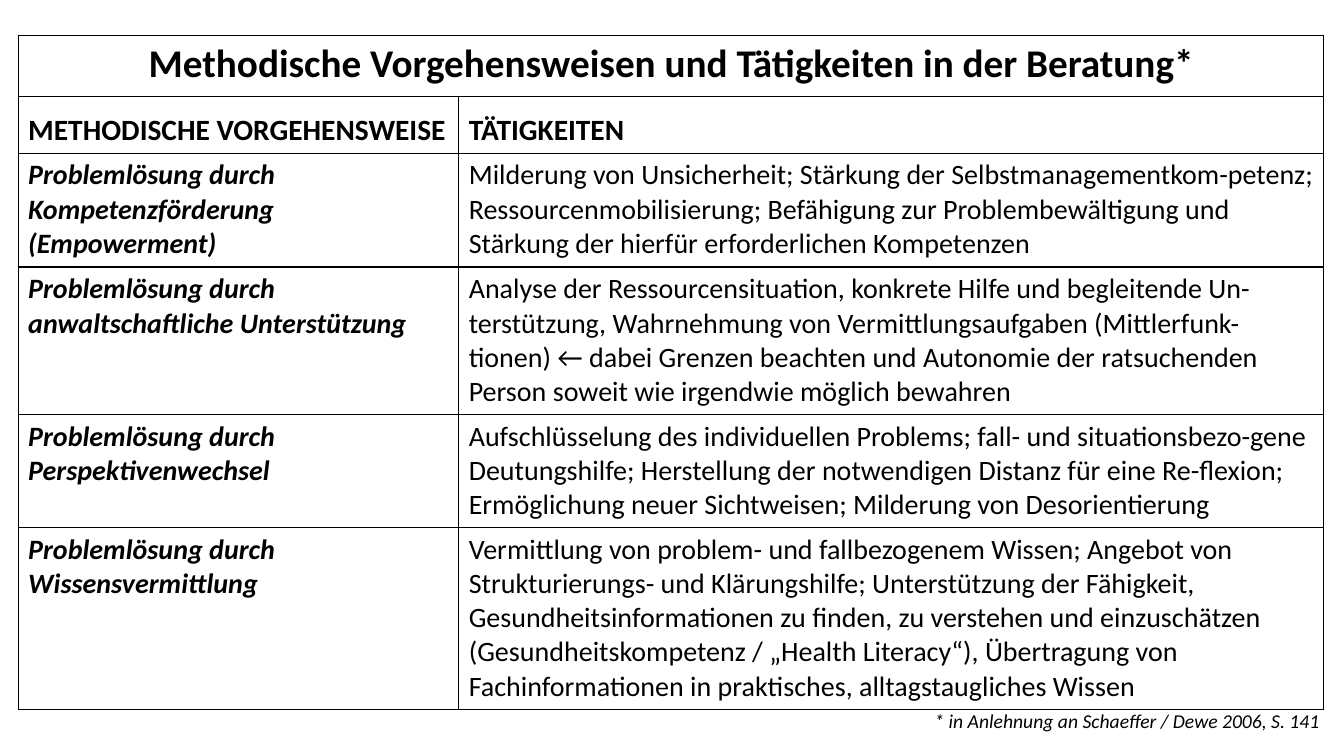
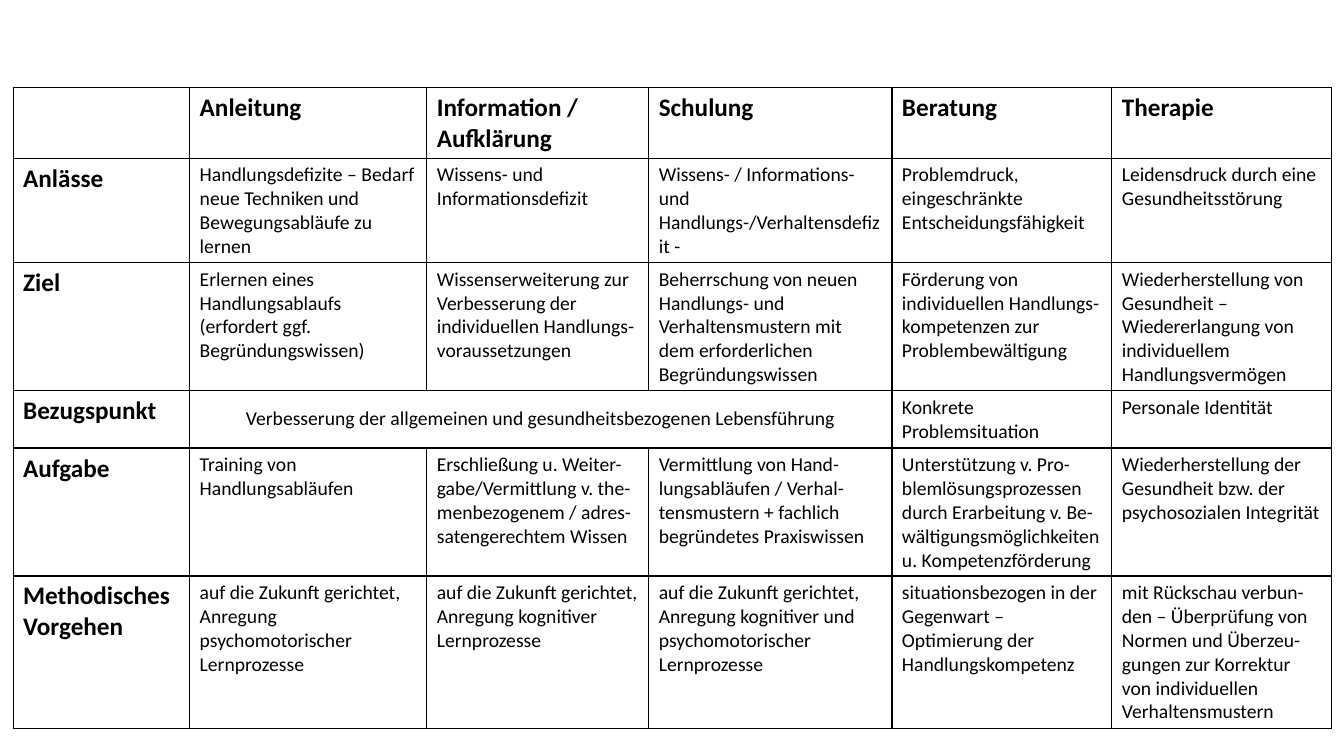
from lxml.etree import SubElement
from pptx import Presentation
from pptx.dml.color import RGBColor
from pptx.enum.text import MSO_ANCHOR as Anchor, PP_ALIGN as Align
from pptx.oxml.ns import qn
from pptx.util import Inches, Pt

# Shared look
FONT = "Calibri"
INK, PAPER = "000000", "FFFFFF"
BORDER_WIDTH = Pt(1)
SLIDE_W, SLIDE_H = 13.33, 7.5


def color(hex_value):
    return RGBColor.from_string(hex_value)


def write(frame, text, size, bold=False, italic=False, align=Align.LEFT):
    """Fill a text frame, one paragraph per line of text."""
    frame.text = text
    for paragraph in frame.paragraphs:
        paragraph.alignment = align
        font = paragraph.font
        for run_font in [font] + [run.font for run in paragraph.runs]:
            run_font.name, run_font.size = FONT, Pt(size)
            run_font.bold, run_font.italic = bold, italic
            run_font.color.rgb = color(INK)


def outline(cell):
    """Draw all four borders; they precede the fill in the cell properties."""
    properties = cell._tc.get_or_add_tcPr()
    for position, side in enumerate(("lnL", "lnR", "lnT", "lnB")):
        line = SubElement(properties, qn(f"a:{side}"), w=str(BORDER_WIDTH))
        fill = SubElement(line, qn("a:solidFill"))
        SubElement(fill, qn("a:srgbClr"), val=INK)
        properties.insert(position, line)


def add_grid(slide, box, columns, rows):
    """Place a bordered table in the box, split by column and row weights."""
    left, top, width, height = box
    grid = slide.shapes.add_table(
        len(rows), len(columns), *(Inches(length) for length in box)).table
    grid.first_row = grid.horz_banding = False
    for column, weight in zip(grid.columns, columns):
        column.width = Inches(width * weight / sum(columns))
    for row, weight in zip(grid.rows, rows):
        row.height = Inches(height * weight / sum(rows))
    for cell in grid.iter_cells():
        cell.fill.solid()
        cell.fill.fore_color.rgb = color(PAPER)
        outline(cell)
    return grid


def fill_cell(cell, text, anchor=Anchor.TOP, **text_format):
    cell.vertical_anchor = anchor
    write(cell.text_frame, text, **text_format)


# Slide 1: methods and activities
HEADING = "Methodische Vorgehensweisen und Tätigkeiten in der Beratung*"
COLUMN_HEADS = ("METHODISCHE VORGEHENSWEISE", "TÄTIGKEITEN")
METHODS = [
    ("Problemlösung durch Kompetenzförderung (Empowerment)",
     "Milderung von Unsicherheit; Stärkung der Selbstmanagementkom-petenz; "
     "Ressourcenmobilisierung; Befähigung zur Problembewältigung und "
     "Stärkung der hierfür erforderlichen Kompetenzen"),
    ("Problemlösung durch anwaltschaftliche Unterstützung",
     "Analyse der Ressourcensituation, konkrete Hilfe und begleitende "
     "Un-terstützung, Wahrnehmung von Vermittlungsaufgaben "
     "(Mittlerfunk-tionen) ← dabei Grenzen beachten und Autonomie der "
     "ratsuchenden Person soweit wie irgendwie möglich bewahren"),
    ("Problemlösung durch Perspektivenwechsel",
     "Aufschlüsselung des individuellen Problems; fall- und "
     "situationsbezo-gene Deutungshilfe; Herstellung der notwendigen Distanz "
     "für eine Re-flexion; Ermöglichung neuer Sichtweisen; Milderung von "
     "Desorientierung"),
    ("Problemlösung durch Wissensvermittlung",
     "Vermittlung von problem- und fallbezogenem Wissen; Angebot von "
     "Strukturierungs- und Klärungshilfe; Unterstützung der Fähigkeit, "
     "Gesundheitsinformationen zu finden, zu verstehen und einzuschätzen "
     "(Gesundheitskompetenz / „Health Literacy“), Übertragung von "
     "Fachinformationen in praktisches, alltagstaugliches Wissen"),
]
CITATION = "* in Anlehnung an Schaeffer / Dewe 2006, S. 141"


def add_citation(slide, box):
    note = slide.shapes.add_textbox(*(Inches(length) for length in box))
    note.text_frame.word_wrap = False
    write(note.text_frame, CITATION, size=14, italic=True)


def methods_slide(slide):
    grid = add_grid(slide, (0.18, 0.35, 12.95, 6.69), columns=(4.37, 8.58),
                    rows=(0.61, 0.56, 1.13, 1.46, 1.12, 1.81))
    # Heading across both columns
    grid.cell(0, 0).merge(grid.cell(0, 1))
    fill_cell(grid.cell(0, 0), HEADING, size=28, bold=True, align=Align.CENTER)
    for column, head in enumerate(COLUMN_HEADS):
        fill_cell(grid.cell(1, column), head, Anchor.BOTTOM, size=21, bold=True)
    # One row per method
    for row, (method, activities) in enumerate(METHODS, start=2):
        fill_cell(grid.cell(row, 0), method, size=20, bold=True, italic=True)
        fill_cell(grid.cell(row, 1), activities, size=20)
    add_citation(slide, (9.17, 6.98, 4.07, 0.34))


# Slide 2: comparison of forms of support; None continues the cell to its left
COMPARISON = [
    ("", "Anleitung", "Information / Aufklärung", "Schulung", "Beratung",
     "Therapie"),
    ("Anlässe",
     "Handlungsdefizite – Bedarf neue Techniken und Bewegungsabläufe zu lernen",
     "Wissens- und Informationsdefizit",
     "Wissens- / Informations- und Handlungs-/Verhaltensdefizit -",
     "Problemdruck, eingeschränkte Entscheidungsfähigkeit",
     "Leidensdruck durch eine Gesundheitsstörung"),
    ("Ziel",
     "Erlernen eines Handlungsablaufs (erfordert ggf. Begründungswissen)",
     "Wissenserweiterung zur Verbesserung der individuellen "
     "Handlungs-voraussetzungen",
     "Beherrschung von neuen Handlungs- und Verhaltensmustern mit dem "
     "erforderlichen Begründungswissen",
     "Förderung von individuellen Handlungs-kompetenzen zur "
     "Problembewältigung",
     "Wiederherstellung von Gesundheit – Wiedererlangung von individuellem "
     "Handlungsvermögen"),
    ("Bezugspunkt",
     "Verbesserung der allgemeinen und gesundheitsbezogenen Lebensführung",
     None, None, "Konkrete Problemsituation", "Personale Identität"),
    ("Aufgabe",
     "Training von Handlungsabläufen",
     "Erschließung u. Weiter-gabe/Vermittlung v. the-menbezogenem / "
     "adres-satengerechtem Wissen",
     "Vermittlung von Hand-lungsabläufen / Verhal-tensmustern + fachlich "
     "begründetes Praxiswissen",
     "Unterstützung v. Pro-blemlösungsprozessen durch Erarbeitung v. "
     "Be-wältigungsmöglichkeiten u. Kompetenzförderung",
     "Wiederherstellung der Gesundheit bzw. der psychosozialen Integrität"),
    ("Methodisches Vorgehen",
     "auf die Zukunft gerichtet, Anregung psychomotorischer Lernprozesse",
     "auf die Zukunft gerichtet,\nAnregung kognitiver Lernprozesse",
     "auf die Zukunft gerichtet, Anregung kognitiver und psychomotorischer "
     "Lernprozesse",
     "situationsbezogen in der Gegenwart – Optimierung der "
     "Handlungskompetenz",
     "mit Rückschau verbun-den – Überprüfung von Normen und Überzeu-gungen "
     "zur Korrektur von individuellen Verhaltensmustern"),
]


def comparison_slide(slide):
    grid = add_grid(slide, (0.13, 0.87, 13.08, 6.35),
                    columns=(1.75, 2.35, 2.2, 2.41, 2.18, 2.18),
                    rows=(0.7, 1.03, 1.27, 0.57, 1.27, 1.51))
    for row, entries in enumerate(COMPARISON):
        for column, entry in enumerate(entries):
            if entry is None:
                continue
            is_head = row == 0 or column == 0
            fill_cell(grid.cell(row, column), entry,
                      size=18 if is_head else 14, bold=is_head)
        # Shared entry, centred over the columns it spans
        if None in entries:
            first = entries.index(None) - 1
            shared = grid.cell(row, first)
            shared.merge(grid.cell(row, first + entries.count(None)))
            fill_cell(shared, entries[first], Anchor.MIDDLE, size=14,
                      align=Align.CENTER)


def main():
    deck = Presentation()
    deck.slide_width, deck.slide_height = Inches(SLIDE_W), Inches(SLIDE_H)
    blank = deck.slide_layouts.get_by_name("Blank")
    for build in (methods_slide, comparison_slide):
        build(deck.slides.add_slide(blank))
    deck.save("out.pptx")


if __name__ == "__main__":
    main()
